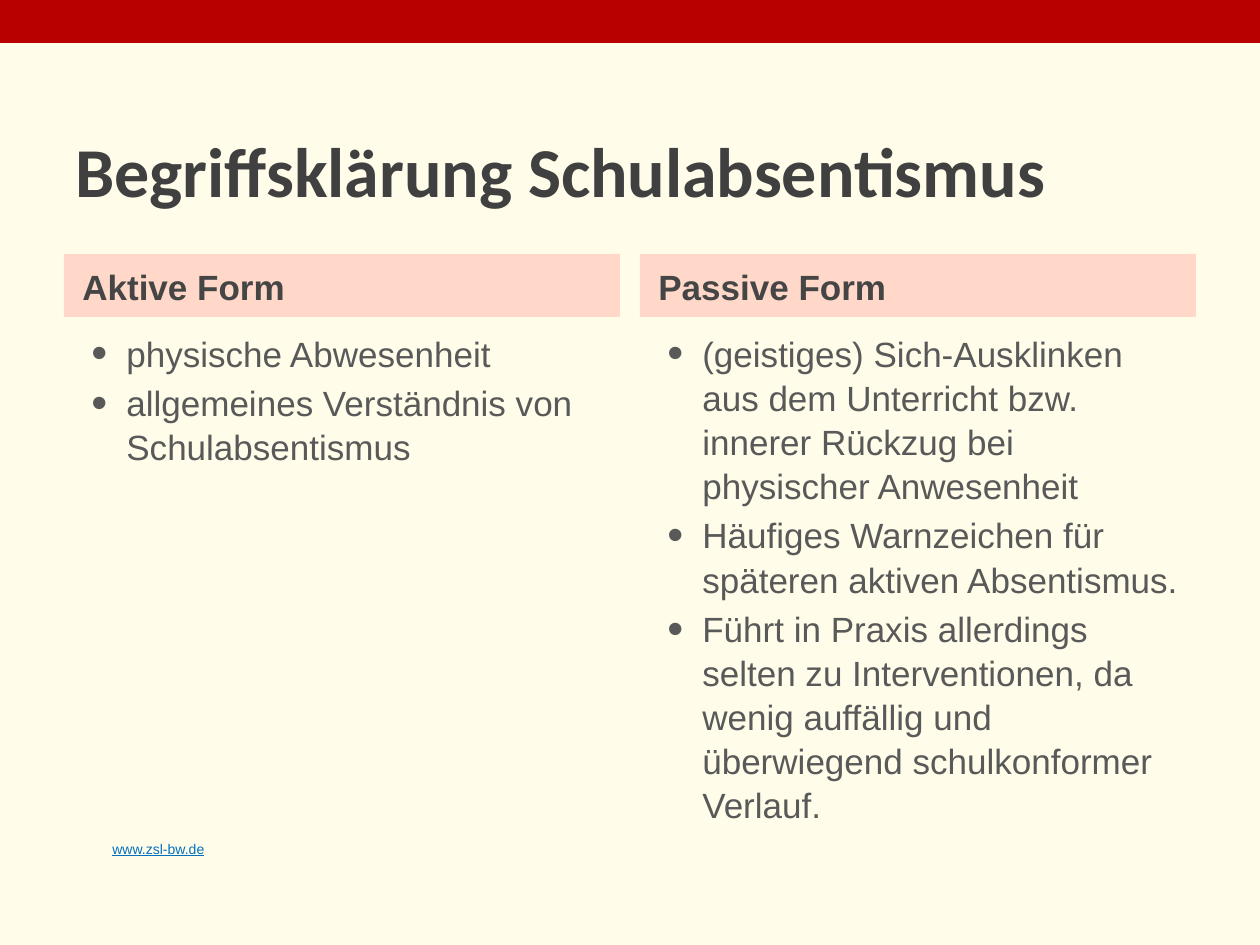
from lxml.etree import SubElement
from pptx import Presentation
from pptx.dml.color import RGBColor
from pptx.enum.shapes import MSO_SHAPE as Shape
from pptx.enum.text import MSO_ANCHOR as Anchor, PP_ALIGN as Align
from pptx.oxml.ns import qn
from pptx.util import Pt

# Content
TITLE = "Begriffsklärung Schulabsentismus"
COLUMNS = [
    ("Aktive Form", [
        "physische Abwesenheit",
        "allgemeines Verständnis von Schulabsentismus",
    ]),
    ("Passive Form", [
        "(geistiges) Sich-Ausklinken aus dem Unterricht bzw. innerer Rückzug bei physischer Anwesenheit",
        "Häufiges Warnzeichen für späteren aktiven Absentismus.",
        "Führt in Praxis allerdings selten zu Interventionen, da wenig auffällig und überwiegend schulkonformer Verlauf.",
    ]),
]
WEBSITE = "www.zsl-bw.de"

# Layout in px, 126 to the inch
SCALE = 914400 // 126
WIDTH, HEIGHT = 1260, 945
COLUMN_LEFT, COLUMN_WIDTH, COLUMN_GAP = 64, 556, 20
HEADER_TOP, HEADER_HEIGHT = 254, 63
LIST_TOP, LIST_HEIGHT = 324, 486
HEADER_INDENT, BULLET_INDENT, BULLET_HANG = 6, 50, 35

# Text formats
TITLE_FONT = {"name": "Calibri", "size": Pt(40), "bold": True, "color": "404040"}
HEADER_FONT = {"name": "Arial", "size": Pt(20), "bold": True, "color": "454545"}
LIST_FONT = {"name": "Arial", "size": Pt(20), "color": "595959"}
WEBSITE_FONT = {"name": "Arial", "size": Pt(8), "underline": True, "color": "0070C0"}


def px(*lengths):
    return [length * SCALE for length in lengths]


def rgb(value):
    return RGBColor.from_string(value)


def add_band(slide, box, color, opacity=100):
    band = slide.shapes.add_shape(Shape.RECTANGLE, *px(*box))
    band.shadow.inherit = False
    band.line.fill.background()
    band.fill.solid()
    band.fill.fore_color.rgb = rgb(color)
    if opacity < 100:
        tint = next(band.fill._xPr.iter(qn("a:srgbClr")))
        SubElement(tint, qn("a:alpha"), val=str(opacity * 1000))
    return band


def add_bullet(props):
    color = SubElement(props, qn("a:buClr"))
    SubElement(color, qn("a:srgbClr"), val=LIST_FONT["color"])
    SubElement(props, qn("a:buSzPct"), val="130000")
    SubElement(props, qn("a:buFont"), typeface="Arial")
    SubElement(props, qn("a:buChar"), char="•")


def write(shape, lines, font, anchor=Anchor.TOP, align=Align.LEFT,
          spacing=1, indent=0, hang=0):
    frame = shape.text_frame
    frame.word_wrap = True
    frame.vertical_anchor = anchor
    for number, line in enumerate(lines):
        paragraph = frame.add_paragraph() if number else frame.paragraphs[0]
        paragraph.text = line
        paragraph.alignment = align
        paragraph.line_spacing = spacing
        if number:
            paragraph.space_before = Pt(3)
        props = paragraph._p.get_or_add_pPr()
        props.set("marL", str(indent * SCALE))
        props.set("indent", str(-hang * SCALE))
        if hang:
            add_bullet(props)
        for key, value in font.items():
            if key == "color":
                paragraph.font.color.rgb = rgb(value)
            else:
                setattr(paragraph.font, key, value)


def main():
    deck = Presentation()
    deck.slide_width, deck.slide_height = px(WIDTH, HEIGHT)
    slide = deck.slides.add_slide(deck.slide_layouts[6])
    slide.background.fill.solid()
    slide.background.fill.fore_color.rgb = rgb("FFFDE9")

    # Top band and website
    add_band(slide, (0, 0, WIDTH, 43), "B80000")
    website = slide.shapes.add_textbox(*px(96, 834, 125, 29))
    write(website, [WEBSITE], WEBSITE_FONT, align=Align.CENTER)

    # Columns
    for number, (heading, points) in enumerate(COLUMNS):
        left = COLUMN_LEFT + number * (COLUMN_WIDTH + COLUMN_GAP)
        header = add_band(slide, (left, HEADER_TOP, COLUMN_WIDTH, HEADER_HEIGHT),
                          "FF6D6D", opacity=25)
        write(header, [heading], HEADER_FONT, Anchor.MIDDLE,
              spacing=1.05, indent=HEADER_INDENT)
        listing = slide.shapes.add_textbox(*px(left, LIST_TOP, COLUMN_WIDTH, LIST_HEIGHT))
        write(listing, points, LIST_FONT, spacing=1.05,
              indent=BULLET_INDENT, hang=BULLET_HANG)

    # Title
    title = slide.shapes.add_textbox(*px(63, 96, 1134, 147))
    write(title, [TITLE], TITLE_FONT, Anchor.MIDDLE)

    deck.save("out.pptx")


if __name__ == "__main__":
    main()
